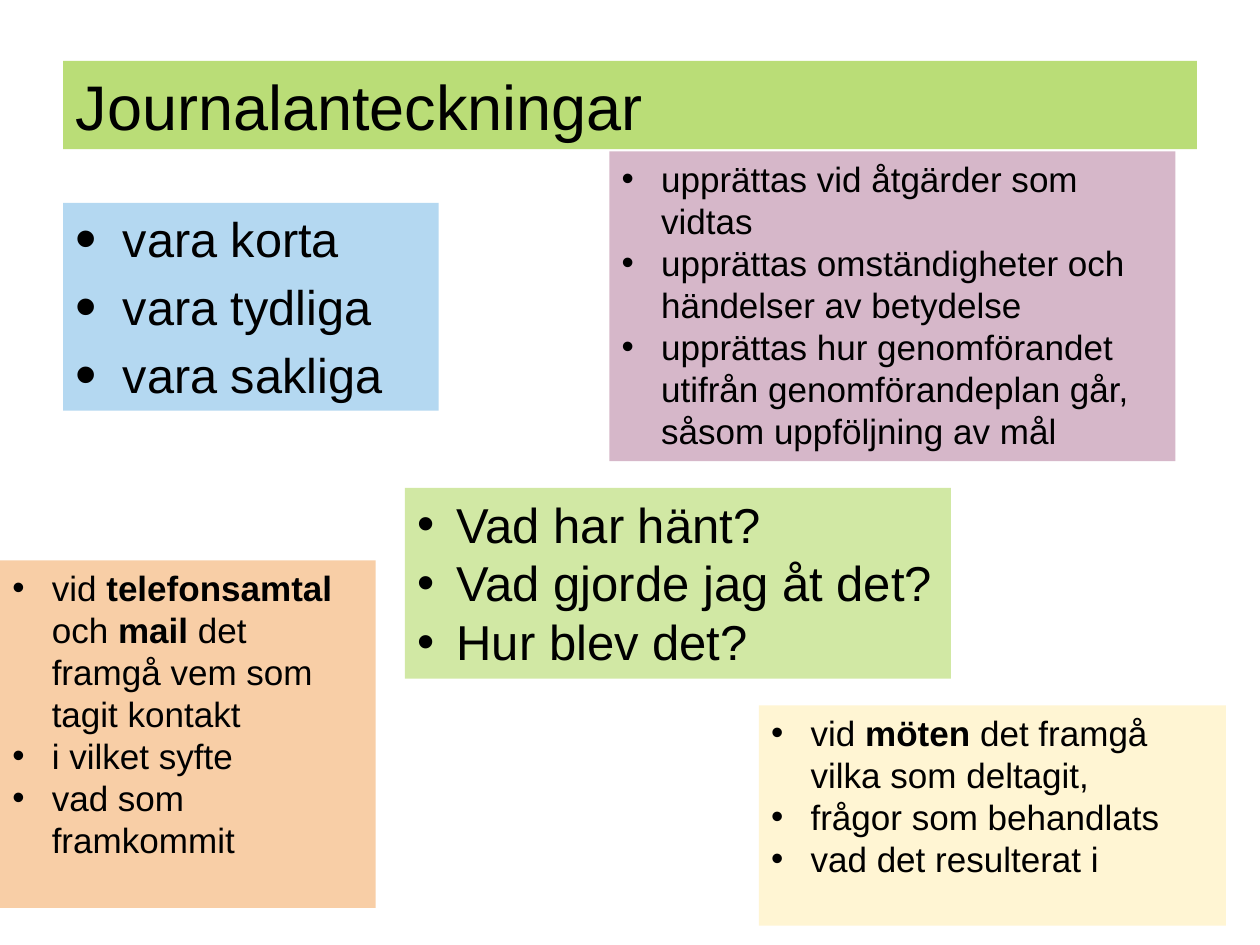
import pptx
import pptx.dml.color
import pptx.enum.text
import pptx.oxml
import pptx.oxml.ns
import pptx.util

Pt = pptx.util.Pt
RGB = pptx.dml.color.RGBColor
NS = pptx.oxml.ns.nsdecls("a")

BLACK = RGB(0x00, 0x00, 0x00)
LIME = RGB(0xBA, 0xDD, 0x77)
BLUE = RGB(0xB4, 0xD8, 0xF1)
CREAM = RGB(0xFF, 0xF5, 0xD3)
PEACH = RGB(0xF8, 0xCE, 0xA6)
MAUVE = RGB(0xD6, 0xB7, 0xC9)
GREEN = RGB(0xD1, 0xE8, 0xA4)


def style(font, size):
    font.name = "Arial"
    font.size = Pt(size)
    font.color.rgb = BLACK


def bullet(para, indent, scale):
    props = para._p.get_or_add_pPr()
    props.set("marL", str(Pt(indent)))
    props.set("indent", str(-Pt(indent)))
    for tag in (
        f'buSzPct {NS} val="{scale * 1000}"',
        f'buFont {NS} typeface="Arial"',
        f'buChar {NS} char="•"',
    ):
        props.append(pptx.oxml.parse_xml(f"<a:{tag}/>"))


deck = pptx.Presentation()
deck.slide_width, deck.slide_height = Pt(720), Pt(540)
slide = deck.slides.add_slide(deck.slide_layouts[5])

title = slide.shapes.title
title.left, title.top, title.width, title.height = Pt(36), Pt(34.8), Pt(648), Pt(50.4)
title.fill.solid()
title.fill.fore_color.rgb = LIME
title.text_frame.text = "Journalanteckningar"
title.text_frame.auto_size = pptx.enum.text.MSO_AUTO_SIZE.NONE
title.text_frame.vertical_anchor = pptx.enum.text.MSO_ANCHOR.MIDDLE
head = title.text_frame.paragraphs[0]
head.alignment = pptx.enum.text.PP_ALIGN.LEFT
style(head.runs[0].font, 36)

# place, fill, text size, indent, bullet percent, gap, lines (* marks bold)
notes = [
    ((36, 115.9, 214.6, 118.8), BLUE, 27.8, 27, 125, 5.56,
     ["vara korta", "vara tydliga", "vara sakliga"]),
    ((433.6, 403, 267, 126), CREAM, 20, 22.5, 100, 0,
     ["vid *möten *det framgå vilka som deltagit,",
      "frågor som behandlats", "vad det resulterat i"]),
    ((0, 320.2, 214.6, 198.7), PEACH, 20, 22.5, 100, 0,
     ["vid *telefonsamtal* och *mail* det framgå vem som tagit kontakt",
      "i vilket syfte", "vad som framkommit"]),
    ((348.2, 86.6, 323.5, 177), MAUVE, 20, 22.5, 100, 0,
     ["upprättas vid åtgärder som vidtas",
      "upprättas omständigheter och händelser av betydelse",
      "upprättas hur genomförandet utifrån genomförandeplan går, "
      "såsom uppföljning av mål"]),
    ((231.3, 278.8, 312, 109), GREEN, 28, 22.5, 100, 0,
     ["Vad har hänt?", "Vad gjorde jag åt det?", "Hur blev det?"]),
]

for place, fill, size, indent, scale, gap, lines in notes:
    box = slide.shapes.add_textbox(*map(Pt, place))
    box.fill.solid()
    box.fill.fore_color.rgb = fill
    frame = box.text_frame
    frame.word_wrap = True
    for row, line in enumerate(lines):
        para = frame.add_paragraph() if row else frame.paragraphs[0]
        bullet(para, indent, scale)
        if row and gap:
            para.space_before = Pt(gap)
        for part, words in enumerate(line.split("*")):
            run = para.add_run()
            run.text = words
            style(run.font, size)
            run.font.bold = part % 2 == 1

deck.save("out.pptx")
